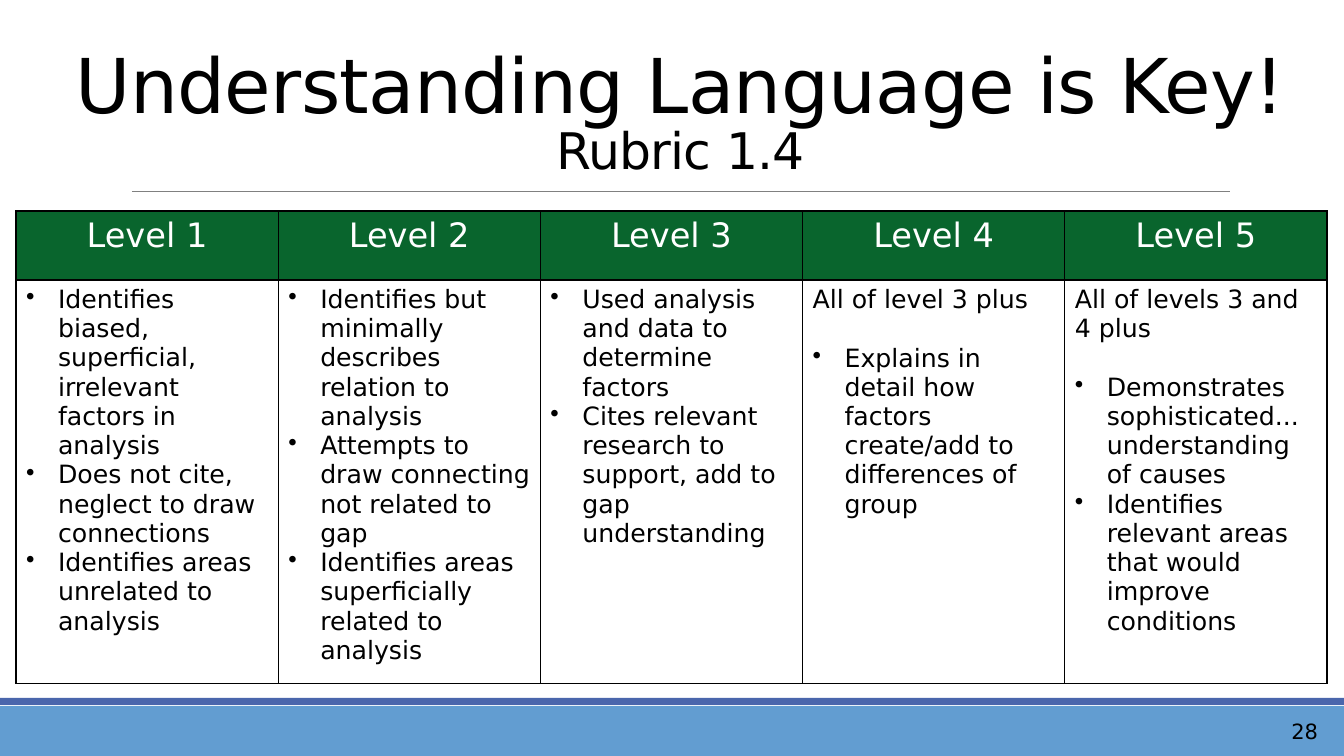
import dataclasses

import pptx
import pptx.dml.color
import pptx.enum.shapes
import pptx.enum.text
import pptx.oxml
import pptx.oxml.ns
import pptx.util

PX = 914400 / 100.8
ALIGN = pptx.enum.text.PP_ALIGN
ANCHOR = pptx.enum.text.MSO_ANCHOR


@dataclasses.dataclass(frozen=True)
class Theme:
    font: str = "DejaVu Sans"
    ink: str = "000000"
    paper: str = "FFFFFF"
    header: str = "09652D"
    footer: str = "629DD1"
    stripe: str = "4A66AC"
    rule: str = "808080"
    title: int = 54
    subtitle: int = 36
    heading: int = 24
    body: int = 18
    number: int = 15


def px(n):
    return pptx.util.Emu(round(n * PX))


def rgb(value):
    return pptx.dml.color.RGBColor.from_string(value)


def apply(obj, formats):
    for name, value in formats.items():
        setattr(obj, name, value)


def element(xml):
    return pptx.oxml.parse_xml(xml.replace(" ", f" {pptx.oxml.ns.nsdecls('a')} ", 1))


class Deck:
    """Draws styled elements on the current slide."""

    def __init__(self, prs, theme):
        self.theme = theme
        self.slide = prs.slides.add_slide(prs.slide_layouts[6])

    def run(self, p, text, size, color=None):
        r = p.add_run()
        r.text = text
        apply(r.font, {"name": self.theme.font, "size": pptx.util.Pt(size)})
        r.font.color.rgb = rgb(color or self.theme.ink)
        return r

    def band(self, x, y, w, h, color):
        kind = pptx.enum.shapes.MSO_SHAPE.RECTANGLE
        sp = self.slide.shapes.add_shape(kind, px(x), px(y), px(w), px(h))
        sp.shadow.inherit = False
        sp.fill.solid()
        sp.fill.fore_color.rgb = rgb(color)
        sp.line.fill.background()

    def rule(self, x1, x2, y):
        kind = pptx.enum.shapes.MSO_CONNECTOR.STRAIGHT
        sp = self.slide.shapes.add_connector(kind, px(x1), px(y), px(x2), px(y))
        sp.line.color.rgb = rgb(self.theme.rule)
        sp.line.width = pptx.util.Pt(0.5)
        sp._element.spPr.append(element("<a:effectLst />"))

    def text(self, x, y, w, h, lines, anchor, formats, spacing=0):
        sp = self.slide.shapes.add_textbox(px(x), px(y), px(w), px(h))
        tf = sp.text_frame
        apply(tf, {"word_wrap": True, "vertical_anchor": anchor})
        p = tf.paragraphs[0]
        apply(p, formats)
        for i, (text, size) in enumerate(lines):
            if i:
                p.add_line_break()
            r = self.run(p, text, size)
            if spacing:
                r.font._element.set("spc", str(spacing))

    def border(self, cell):
        tcPr = cell._tc.get_or_add_tcPr()
        for side in "LRTB":
            tcPr.append(element(
                f'<a:ln{side} w="12700"><a:solidFill><a:srgbClr val="{self.theme.ink}"/>'
                f"</a:solidFill></a:ln{side}>"))

    def bullet(self, p):
        pPr = p._p.get_or_add_pPr()
        for name, value in {"marL": px(32), "indent": -px(32)}.items():
            pPr.set(name, str(value))
        pPr.append(element('<a:buChar char="•"/>'))

    def heading(self, cell, text):
        self.border(cell)
        cell.fill.solid()
        cell.fill.fore_color.rgb = rgb(self.theme.header)
        p = cell.text_frame.paragraphs[0]
        p.alignment = ALIGN.CENTER
        self.run(p, text, self.theme.heading, self.theme.paper)

    def criteria(self, cell, intro, bullets):
        self.border(cell)
        cell.fill.background()
        tf = cell.text_frame
        p = tf.paragraphs[0]
        if intro:
            self.run(p, intro, self.theme.body)
            p.space_after = pptx.util.Pt(21)
        for i, text in enumerate(bullets):
            if i or intro:
                p = tf.add_paragraph()
            self.run(p, text, self.theme.body)
            self.bullet(p)

    def rubric(self, x, y, w, heights, levels):
        shape = self.slide.shapes.add_table(
            2, len(levels), px(x), px(y), px(w), px(sum(heights)))
        table = shape.table
        apply(table, {"first_row": False, "horz_banding": False})
        for row, height in zip(table.rows, heights):
            row.height = px(height)
        for i, (intro, bullets) in enumerate(levels):
            table.columns[i].width = px(w / len(levels))
            self.heading(table.cell(0, i), f"Level {i + 1}")
            self.criteria(table.cell(1, i), intro, bullets)


LEVELS = [
    ("", ["Identifies biased, superficial, irrelevant factors in analysis",
          "Does not cite, neglect to draw connections",
          "Identifies areas unrelated to analysis"]),
    ("", ["Identifies but minimally describes relation to analysis",
          "Attempts to draw connecting not related to gap",
          "Identifies areas superficially related to analysis"]),
    ("", ["Used analysis and data to determine factors",
          "Cites relevant research to support, add to gap understanding"]),
    ("All of level 3 plus",
     ["Explains in detail how factors create/add to differences of group"]),
    ("All of levels 3 and 4 plus",
     ["Demonstrates sophisticated... understanding of causes",
      "Identifies relevant areas that would improve conditions"]),
]


def main():
    prs = pptx.Presentation()
    apply(prs, {"slide_width": px(1344), "slide_height": px(756)})
    theme = Theme()
    deck = Deck(prs, theme)
    deck.band(0, 706, 1344, 50, theme.footer)
    deck.band(0, 698, 1344, 7, theme.stripe)
    deck.rule(132, 1230, 191)
    deck.text(34, 31, 1293, 154,
              [("Understanding Language is Key!", theme.title),
               ("Rubric 1.4", theme.subtitle)],
              ANCHOR.BOTTOM, {"alignment": ALIGN.CENTER, "line_spacing": 0.85}, -50)
    deck.rubric(16, 211, 1311, [69, 390], LEVELS)
    deck.text(1256, 709, 72, 44, [("28", theme.number)],
              ANCHOR.MIDDLE, {"alignment": ALIGN.RIGHT})
    prs.save("out.pptx")


if __name__ == "__main__":
    main()
